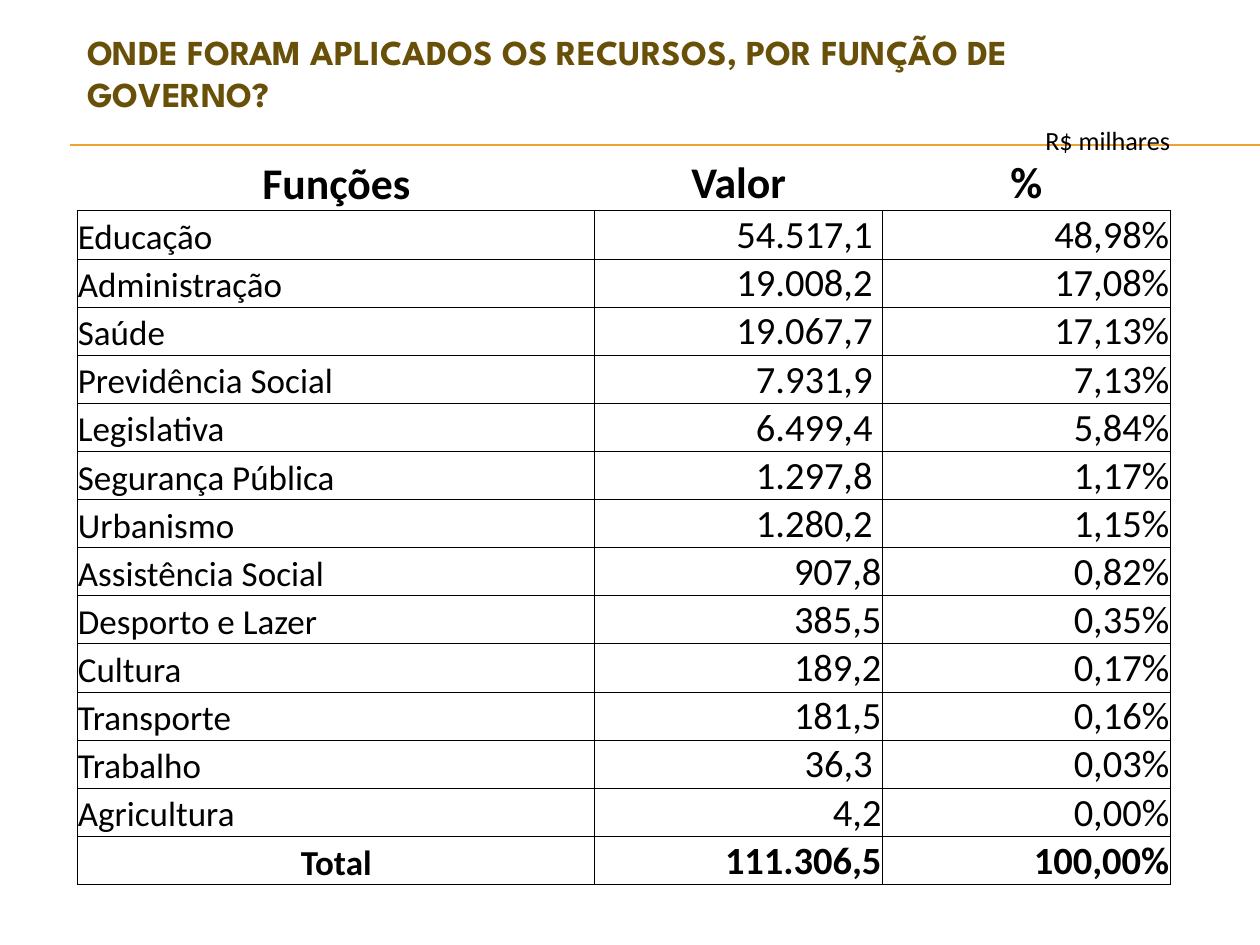
from lxml.etree import SubElement
from pptx import Presentation
from pptx.dml.color import RGBColor
from pptx.enum.text import MSO_ANCHOR, PP_ALIGN
from pptx.oxml.ns import qn
from pptx.util import Cm, Pt

BLACK = RGBColor(0x00, 0x00, 0x00)
BROWN = RGBColor(0x69, 0x50, 0x08)
AMBER = RGBColor(0xF0, 0xA2, 0x2E)

HEADINGS = ("Funções", "Valor", "%")
SPENDING = [
    ("Educação", "54.517,1", "48,98%"),
    ("Administração", "19.008,2", "17,08%"),
    ("Saúde", "19.067,7", "17,13%"),
    ("Previdência Social", "7.931,9", "7,13%"),
    ("Legislativa", "6.499,4", "5,84%"),
    ("Segurança Pública", "1.297,8", "1,17%"),
    ("Urbanismo", "1.280,2", "1,15%"),
    ("Assistência Social", "907,8", "0,82%"),
    ("Desporto e Lazer", "385,5", "0,35%"),
    ("Cultura", "189,2", "0,17%"),
    ("Transporte", "181,5", "0,16%"),
    ("Trabalho", "36,3", "0,03%"),
    ("Agricultura", "4,2", "0,00%"),
]
TOTAL = ("Total", "111.306,5", "100,00%")
INDENTED_VALUES = {value for _, value, _ in SPENDING[:7]} | {"36,3"}

COLUMN_WIDTHS = (Cm(10.42), Cm(5.8), Cm(5.8))
UNIT_HEIGHT, HEADING_HEIGHT, BODY_HEIGHT = Cm(1.06), Cm(1.08), Cm(0.97)


def place_title(slide, left, top, width, height):
    title = slide.shapes.title
    title.left, title.top, title.width, title.height = left, top, width, height
    title.text_frame.text = "ONDE FORAM APLICADOS OS RECURSOS, POR FUNÇÃO DE GOVERNO?"
    title.text_frame.vertical_anchor = MSO_ANCHOR.MIDDLE
    paragraph = title.text_frame.paragraphs[0]
    paragraph.alignment = PP_ALIGN.LEFT
    font = paragraph.font
    font.name, font.size, font.bold = "League Spartan", Pt(20), True
    font.color.rgb = BROWN


def add_rules(slide, left, top, right):
    """Draw the double rule under the title."""
    for y in (top, top + Cm(0.02)):
        rule = slide.shapes.add_connector(1, left, y, right, y)
        rule.line.color.rgb = AMBER
        rule.line.width = Pt(0.75)
        SubElement(rule._element.spPr, qn("a:effectLst"))


def set_borders(cell, sides):
    """Draw thin black borders on the given sides (of "LRTB"), none elsewhere."""
    properties = cell._tc.get_or_add_tcPr()
    for side in "LRTB":
        border = SubElement(properties, qn(f"a:ln{side}"), w=str(Pt(0.5)))
        if side in sides:
            fill = SubElement(border, qn("a:solidFill"))
            SubElement(fill, qn("a:srgbClr"), val=str(BLACK))
        else:
            SubElement(border, qn("a:noFill"))


def write_cell(cell, text, size, alignment, bold=False,
               anchor=MSO_ANCHOR.BOTTOM, inset=0):
    cell.margin_left = cell.margin_right = cell.margin_top = inset
    cell.margin_bottom = 0
    cell.vertical_anchor = anchor
    cell.text = text
    paragraph = cell.text_frame.paragraphs[0]
    paragraph.alignment = alignment
    font = paragraph.font
    font.name, font.size, font.bold = "Calibri", Pt(size), bold
    font.color.rgb = BLACK


def add_spending_table(slide, left, top):
    heights = [UNIT_HEIGHT, HEADING_HEIGHT] + [BODY_HEIGHT] * (len(SPENDING) + 1)
    table = slide.shapes.add_table(len(heights), len(COLUMN_WIDTHS), left, top,
                                   sum(COLUMN_WIDTHS), sum(heights)).table
    table.first_row = table.horz_banding = False
    for column, width in zip(table.columns, COLUMN_WIDTHS):
        column.width = width
    for index, height in enumerate(heights):
        table.rows[index].height = height
        for cell in table.rows[index].cells:
            set_borders(cell, ("", "B")[index] if index < 2 else "LRTB")
            cell.fill.background()

    write_cell(table.cell(0, 2), "R$ milhares", 15, PP_ALIGN.RIGHT)
    for column, heading in enumerate(HEADINGS):
        anchor = MSO_ANCHOR.MIDDLE if column else MSO_ANCHOR.BOTTOM
        write_cell(table.cell(1, column), heading, 25, PP_ALIGN.CENTER, True, anchor)

    for row, record in enumerate(SPENDING + [TOTAL], start=2):
        is_total = record is TOTAL
        label_alignment = PP_ALIGN.CENTER if is_total else PP_ALIGN.LEFT
        write_cell(table.cell(row, 0), record[0], 20, label_alignment, is_total)
        for column in (1, 2):
            figure = table.cell(row, column)
            write_cell(figure, record[column], 22, PP_ALIGN.RIGHT, is_total,
                       inset=Cm(0.02))
            if record[column] in INDENTED_VALUES:
                figure.margin_right = Cm(0.2)


def main():
    presentation = Presentation()
    presentation.slide_width, presentation.slide_height = Cm(25.4), Cm(19.05)
    slide = presentation.slides.add_slide(presentation.slide_layouts[5])
    add_rules(slide, Cm(1.42), Cm(2.92), presentation.slide_width)
    place_title(slide, Cm(1.5), Cm(0.53), Cm(21.59), Cm(1.88))
    add_spending_table(slide, Cm(1.57), Cm(2.11))
    presentation.save("out.pptx")


if __name__ == "__main__":
    main()
